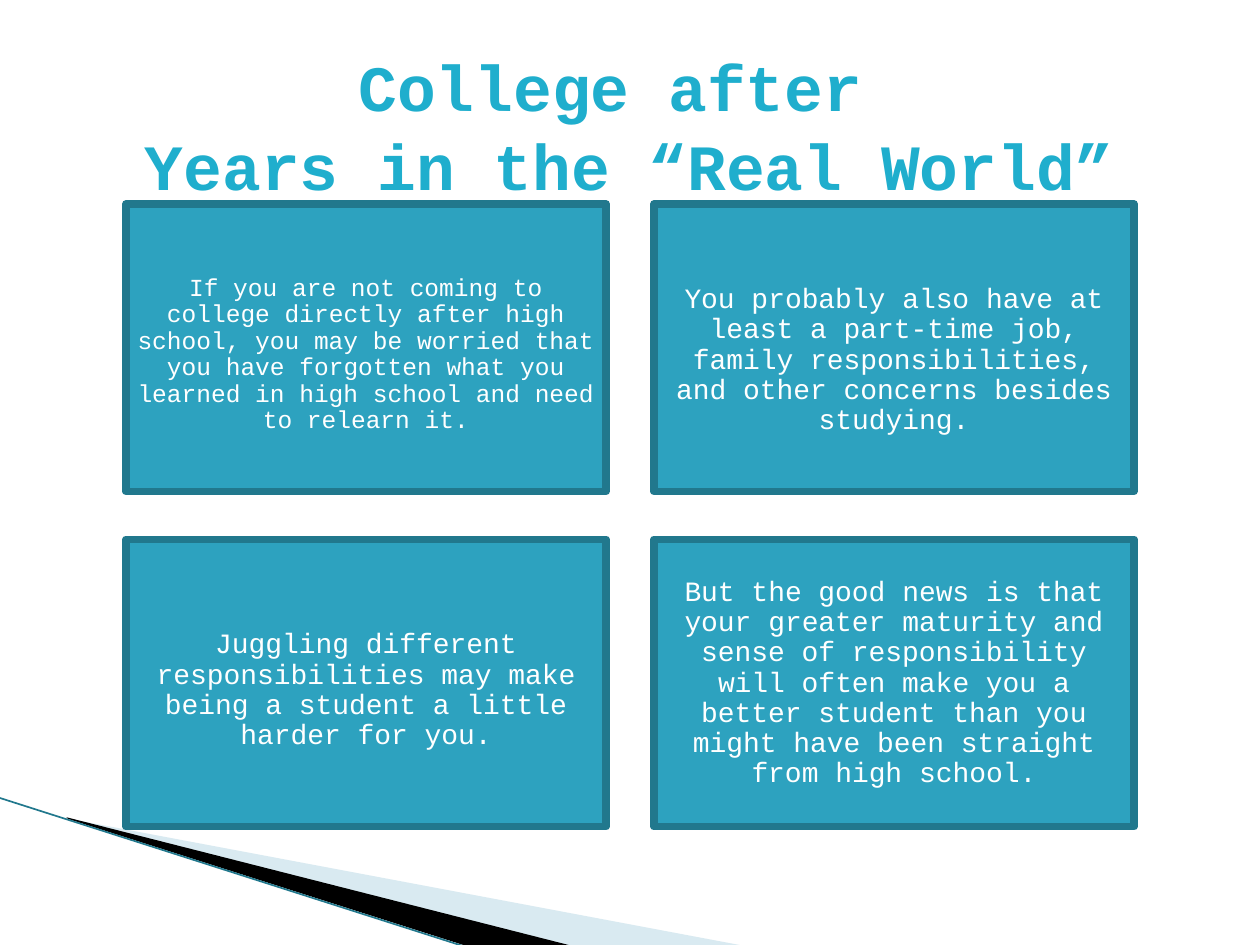
from lxml import etree
from pptx import Presentation
from pptx import util as u
from pptx.dml.color import RGBColor
from pptx.enum import shapes, text
from pptx.oxml.ns import qn

TEAL = RGBColor(0x2D, 0xA2, 0xBF)
DARK_TEAL = RGBColor(0x21, 0x78, 0x8D)
TITLE_BLUE = RGBColor(0x1F, 0xAE, 0xCD)
PALE_BLUE = RGBColor(0xA0, 0xCB, 0xDC)
BLACK = RGBColor(0, 0, 0)
WHITE = RGBColor(0xFF, 0xFF, 0xFF)

# Text, size, inset, extra inset above the text
CARDS = [
    ("If you are not coming to college directly after high school, you may be "
     "worried that you have forgotten what you learned in high school and need "
     "to relearn it.", 14, 4.3, 8),
    ("You probably also have at least a part-time job, family responsibilities, "
     "and other concerns besides studying.", 16, 5, 14),
    ("Juggling different responsibilities may make being a student a little "
     "harder for you.", 16, 4.3, 8),
    ("But the good news is that your greater maturity and sense of responsibility "
     "will often make you a better student than you might have been straight from "
     "high school.", 16, 5, 0),
]


class SlideBuilder:
    font = "Courier New"

    def __init__(self, slide):
        self.slide = slide

    def format_text(self, frame, size, color, bold=False):
        frame.word_wrap = True
        frame.vertical_anchor = text.MSO_ANCHOR.MIDDLE
        for paragraph in frame.paragraphs:
            paragraph.alignment = text.PP_ALIGN.CENTER
            for run in paragraph.runs:
                run.font.name = self.font
                run.font.size = u.Pt(size)
                run.font.bold = bold
                run.font.color.rgb = color

    def title(self, wording, left, top, width, height):
        shape = self.slide.shapes.title
        shape.left, shape.top = u.Pt(left), u.Pt(top)
        shape.width, shape.height = u.Pt(width), u.Pt(height)
        frame = shape.text_frame
        frame.text = wording
        frame.auto_size = text.MSO_AUTO_SIZE.NONE
        frame.margin_top, frame.margin_bottom = u.Pt(12.6), u.Pt(3.6)
        self.format_text(frame, 36.9, TITLE_BLUE, bold=True)
        frame.paragraphs[0].line_spacing = u.Pt(45)

    def card(self, wording, left, top, width, height, size, inset, extra_top):
        shape = self.slide.shapes.add_shape(
            shapes.MSO_SHAPE.RECTANGLE,
            u.Pt(left), u.Pt(top), u.Pt(width), u.Pt(height))
        shape.shadow.inherit = False
        shape.fill.solid()
        shape.fill.fore_color.rgb = TEAL
        shape.line.color.rgb = DARK_TEAL
        shape.line.width = u.Pt(4.33)
        etree.SubElement(shape.line._get_or_add_ln(), qn("a:round"))
        frame = shape.text_frame
        frame.text = wording
        frame.margin_left = frame.margin_right = frame.margin_bottom = u.Pt(inset)
        frame.margin_top = u.Pt(inset + extra_top)
        self.format_text(frame, size, WHITE)
        frame.paragraphs[0].line_spacing = 0.9

    def wedge(self, points, color, opacity=100):
        builder = self.slide.shapes.build_freeform(*points[0], scale=u.Pt(1))
        builder.add_line_segments(points[1:], close=True)
        shape = builder.convert_to_shape()
        shape.shadow.inherit = False
        shape.fill.solid()
        shape.fill.fore_color.rgb = color
        shape.line.fill.background()
        if opacity < 100:
            color_element = shape._element.spPr.find(".//" + qn("a:srgbClr"))
            etree.SubElement(color_element, qn("a:alpha"), val=str(opacity * 1000))

    def line(self, start, end, color, width):
        connector = self.slide.shapes.add_connector(
            shapes.MSO_CONNECTOR.STRAIGHT, *(u.Pt(value) for value in start + end))
        connector.line.color.rgb = color
        connector.line.width = u.Pt(width)
        etree.SubElement(connector._element.spPr, qn("a:effectLst"))


def main():
    presentation = Presentation()
    presentation.slide_width, presentation.slide_height = u.Pt(720), u.Pt(540)
    slide = presentation.slides.add_slide(presentation.slide_layouts[5])
    builder = SlideBuilder(slide)

    # Corner decoration
    builder.wedge([(39.6, 468.4), (428.4, 540.7), (328.3, 540.7), (39.6, 468)],
                  PALE_BLUE, opacity=40)
    builder.wedge([(38.2, 467.3), (329, 540.7), (267.8, 541.4), (38.9, 468)], BLACK)
    builder.line((-0.7, 455.8), (267.1, 541.4), DARK_TEAL, 0.95)

    # Two by two grid of cards
    width, height, gap_x, gap_y = 274.3, 164.2, 27.4, 27.4
    for index, (wording, size, inset, extra_top) in enumerate(CARDS):
        row, column = divmod(index, 2)
        builder.card(wording, 72 + column * (width + gap_x),
                     116.6 + row * (height + gap_y),
                     width, height, size, inset, extra_top)

    # Title
    builder.title("College after \vYears in the “Real World”", 36, 21.6, 648, 90)

    presentation.save("out.pptx")


if __name__ == "__main__":
    main()
